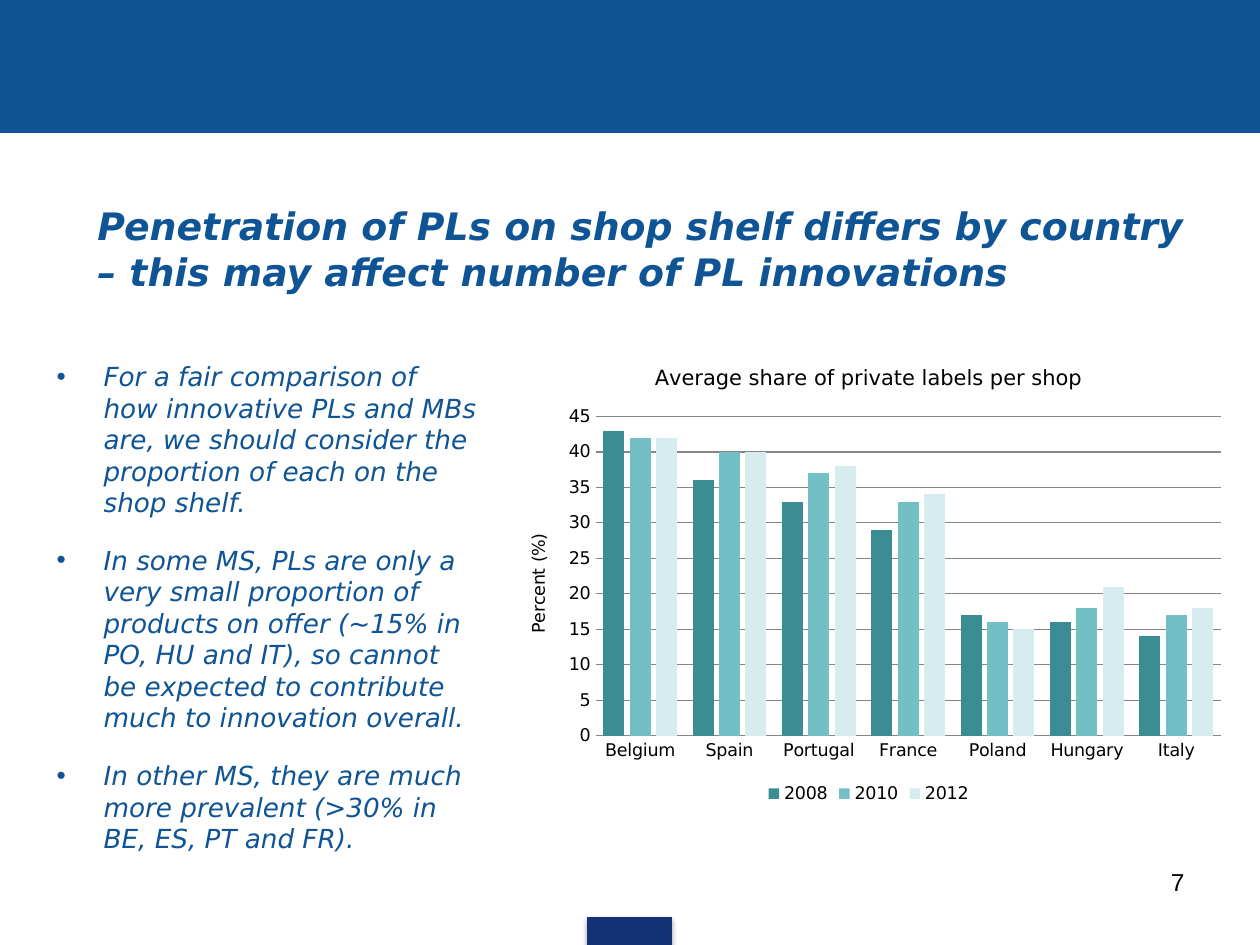
from lxml import etree
from pptx import Presentation
from pptx.chart.data import CategoryChartData
from pptx.dml.color import RGBColor
from pptx.enum import chart as ch, shapes, text
from pptx.oxml import parse_xml
from pptx.oxml.ns import nsdecls, qn
from pptx.util import Cm, Pt

BLUE, NAVY, BLACK, GREY = "0F5494", "133176", "000000", "868686"
FONT = "DejaVu Sans"

TITLE = ("Penetration of PLs on shop shelf differs by country "
         "– this may affect number of PL innovations")
BULLETS = [
    "For a fair comparison of how innovative PLs and MBs are, we should "
    "consider the proportion of each on the shop shelf.",
    "In some MS, PLs are only a very small proportion of products on offer "
    "(~15% in PO, HU and IT), so cannot be expected to contribute much to "
    "innovation overall.",
    "In other MS, they are much more prevalent (>30% in BE, ES, PT and FR).",
]
PAGE = "7"
CHART_TITLE = "Average share of private labels per shop"
AXIS_TITLE = "Percent (%)"
COUNTRIES = ["Belgium", "Spain", "Portugal", "France", "Poland", "Hungary", "Italy"]
SERIES = [
    ("2008", "3C8C93", [43, 36, 33, 29, 17, 16, 14]),
    ("2010", "72BFC5", [42, 40, 37, 33, 16, 18, 17]),
    ("2012", "D6ECEE", [42, 40, 38, 34, 15, 21, 18]),
]


def rgb(code):
    return RGBColor.from_string(code)


def box(*lengths):
    return [Cm(n) for n in lengths]


def style(font, size, color, name=FONT, bold=False, italic=False):
    font.size, font.name = Pt(size), name
    font.bold, font.italic = bold, italic
    font.color.rgb = rgb(color)


def add_bar(s, place, color):
    sp = s.shapes.add_shape(shapes.MSO_SHAPE.RECTANGLE, *box(*place))
    sp.shadow.inherit = False
    sp.fill.solid()
    sp.fill.fore_color.rgb = rgb(color)
    sp.line.color.rgb = rgb(color)
    sp.line.width = Pt(0.75)
    return sp


def add_shadow(sp):
    effects = sp._element.spPr.find(qn("a:effectLst"))
    effects.append(parse_xml(
        f'<a:outerShdw {nsdecls("a")} blurRad="{Pt(3.1)}" dist="{Pt(1.8)}" '
        'dir="5400000" rotWithShape="0"><a:srgbClr val="000000">'
        '<a:alpha val="35000"/></a:srgbClr></a:outerShdw>'))


def add_title(s):
    sp = s.shapes.title
    sp.left, sp.top, sp.width, sp.height = box(0.71, 4.11, 24, 1.8)
    tf = sp.text_frame
    tf.text = TITLE
    tf.word_wrap = True
    tf.auto_size = text.MSO_AUTO_SIZE.NONE
    tf.vertical_anchor = text.MSO_ANCHOR.MIDDLE
    p = tf.paragraphs[0]
    p.alignment = text.PP_ALIGN.LEFT
    p._p.get_or_add_pPr().set("marL", str(Cm(1)))
    style(p.runs[0].font, 21.6, BLUE, bold=True, italic=True)


def add_bullets(s):
    tf = s.shapes.add_textbox(*box(0.89, 7.14, 9, 11.2)).text_frame
    tf.word_wrap = True
    tf.text = "\n".join(BULLETS)
    for i, p in enumerate(tf.paragraphs):
        pPr = p._p.get_or_add_pPr()
        pPr.set("marL", str(Cm(0.95)))
        pPr.set("indent", str(Cm(-0.95)))
        color = etree.SubElement(pPr, qn("a:buClr"))
        etree.SubElement(color, qn("a:srgbClr"), val=BLUE)
        etree.SubElement(pPr, qn("a:buFont"), typeface="Arial")
        etree.SubElement(pPr, qn("a:buChar"), char="•")
        p.space_before = Pt(3 if i else 0)
        p.space_after = Pt(12)
        style(p.runs[0].font, 15, BLUE, italic=True)


def add_page_number(s):
    tf = s.shapes.add_textbox(*box(18.2, 17.35, 5.93, 1.32)).text_frame
    tf.word_wrap = True
    tf.text = PAGE
    p = tf.paragraphs[0]
    p.alignment = text.PP_ALIGN.RIGHT
    style(p.runs[0].font, 14, BLACK, "Arial")


def add_shares_chart(s):
    data = CategoryChartData()
    data.categories = COUNTRIES
    for name, _, values in SERIES:
        data.add_series(name, values)
    chart = s.shapes.add_chart(ch.XL_CHART_TYPE.COLUMN_CLUSTERED,
                               *box(10.11, 6.93, 14.8, 9.37), data).chart
    style(chart.font, 10, BLACK)

    cat, val = chart.category_axis, chart.value_axis
    for owner, words, size in ((chart, CHART_TITLE, 12), (val, AXIS_TITLE, 10)):
        title = owner.chart_title if owner is chart else owner.axis_title
        title.text_frame.text = words
        style(title.text_frame.paragraphs[0].runs[0].font, size, BLACK)
    chart.chart_title.include_in_layout = False

    for axis in (cat, val):
        axis.major_tick_mark = axis.minor_tick_mark = ch.XL_TICK_MARK.NONE
    cat.format.line.color.rgb = rgb(GREY)
    val.format.line.fill.background()
    val.minimum_scale, val.maximum_scale, val.major_unit = 0, 45, 5
    grid = val.major_gridlines.format.line
    grid.color.rgb = rgb(GREY)
    grid.width = Pt(0.75)

    chart.has_legend = True
    chart.legend.position = ch.XL_LEGEND_POSITION.BOTTOM
    chart.legend.include_in_layout = False

    plot = chart.plots[0]
    plot.gap_width, plot.overlap, plot.vary_by_categories = 75, -25, False
    for series, (_, color, _) in zip(plot.series, SERIES):
        series.format.fill.solid()
        series.format.fill.fore_color.rgb = rgb(color)


def main():
    prs = Presentation()
    prs.slide_width, prs.slide_height = box(25.4, 19.05)
    s = prs.slides.add_slide(prs.slide_layouts[5])
    add_bar(s, (0, 0, 25.4, 2.67), BLUE)
    add_shadow(add_bar(s, (11.84, 18.49, 1.7, 0.56), NAVY))
    add_title(s)
    add_bullets(s)
    add_page_number(s)
    add_shares_chart(s)
    prs.save("out.pptx")


if __name__ == "__main__":
    main()
